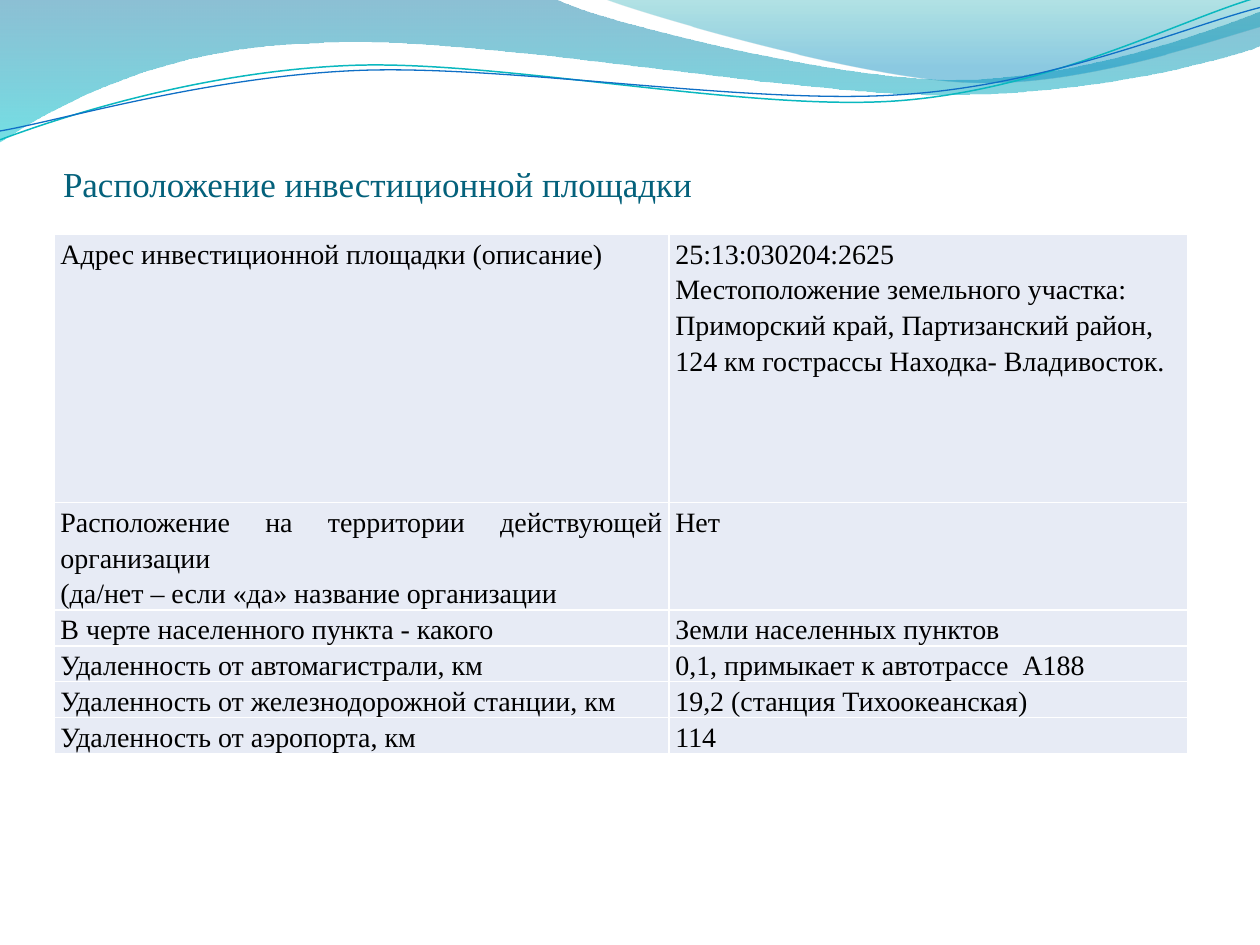
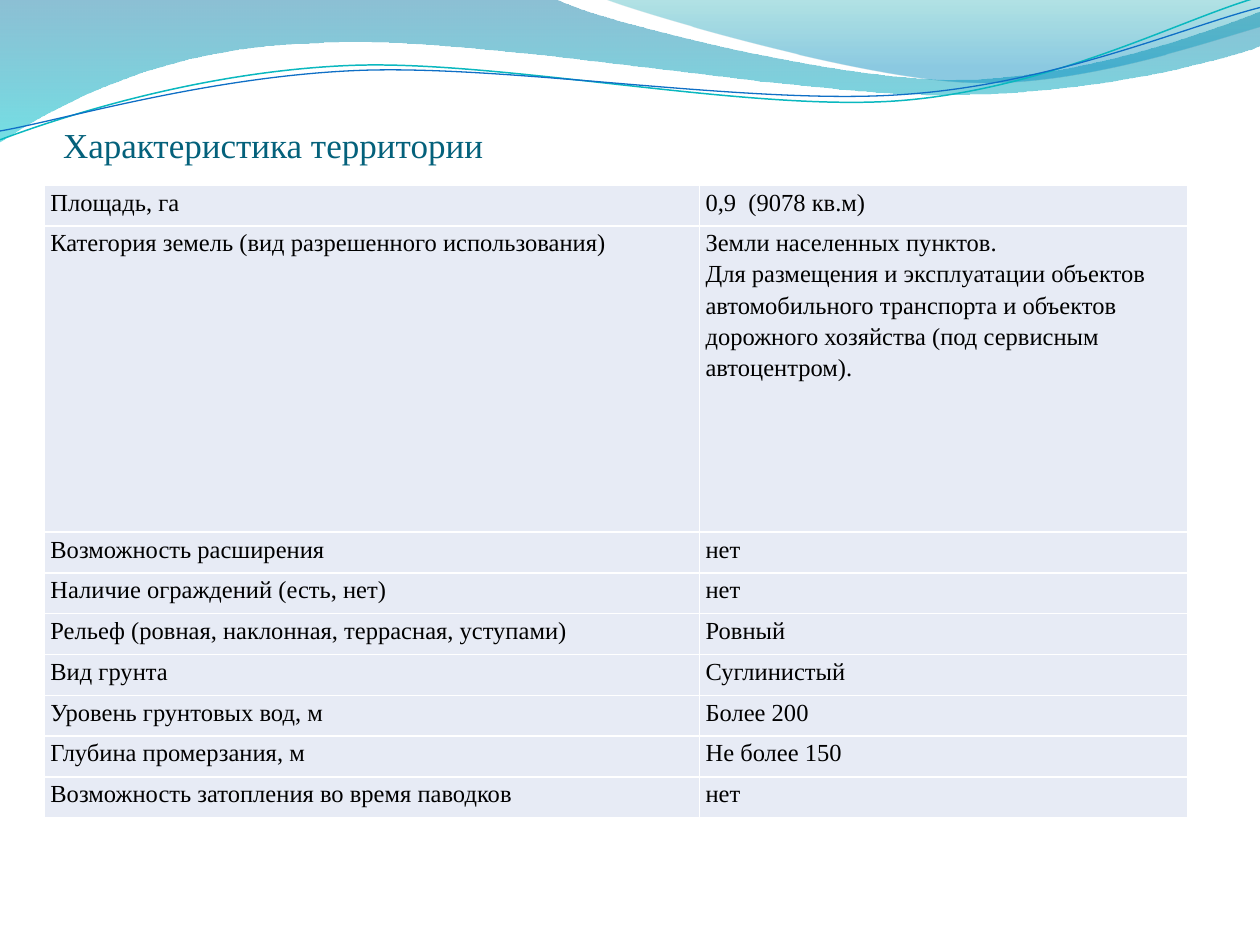
from dataclasses import dataclass
from math import cos, radians, sin

from lxml.etree import SubElement as Sub
from pptx import Presentation
from pptx.dml.color import RGBColor as Rgb
from pptx.enum.text import MSO_ANCHOR as Anchor, PP_ALIGN as Align
from pptx.oxml.ns import qn
from pptx.util import Inches, Pt


@dataclass(frozen=True)
class Theme:
    """Colours, font and type sizes of the deck."""
    font: str = "Times New Roman"
    title: str = "04617B"
    text: str = "000000"
    cell: str = "E7EBF5"
    rule: str = "FFFFFF"
    teal: str = "0AB8BF"
    blue: str = "0F6FC6"
    band: tuple = ((0, "0074A1", 45), (1, "00C6CF", 55))
    crest: tuple = ((0, "00A1A9", 30), (0.8, "008BBF", 45))
    head: int = 20
    large: int = 16
    small: int = 14
    lead: float = 1.15
    tilt: float = 2.7


THEME = Theme()

BAND = [
    (0, 0), (4.4, -0.01), (4.76, 0.17, 6.64, 0.63, 7.58, 0.63),
    (8.53, 0.63, 9.58, 0.26, 10, 0.09), (10.01, 0.36),
    (9.83, 0.44, 8.7, 0.76, 7.46, 0.75), (6.22, 0.75, 3.82, 0.28, 2.57, 0.34),
    (1.29, 0.36, 0.46, 0.83, -0.01, 1.13), (0, 0),
]
CREST = [
    (4.79, -0.01), (5.09, 0.11, 6.82, 0.62, 7.69, 0.65),
    (8.56, 0.69, 9.61, 0.32, 10, 0.21), (10, 0), (4.79, -0.01),
]
TEAL = [
    (0, 1.11), (0.48, 0.93, 1.58, 0.57, 2.77, 0.52),
    (3.95, 0.47, 5.93, 0.89, 7.13, 0.8), (8.33, 0.71, 9.38, 0.15, 9.98, -0.02),
]
BLUE = [
    (0, 1.04), (0.47, 0.96, 1.64, 0.61, 2.83, 0.56),
    (4.03, 0.51, 5.97, 0.84, 7.17, 0.75), (8.36, 0.67, 9.41, 0.21, 10, 0.06),
]

PLACE = [
    ("Адрес инвестиционной площадки (описание) ",
     "25:13:030204:2625\nМестоположение земельного участка: Приморский край, "
     "Партизанский район, 124 км гострассы Находка- Владивосток."),
    ("Расположение на территории действующей организации \n"
     "(да/нет – если «да» название организации", "Нет"),
    ("В черте населенного пункта - какого ", "Земли населенных пунктов"),
    ("Удаленность от автомагистрали, км ", "0,1, примыкает к автотрассе  А188"),
    ("Удаленность от железнодорожной станции, км ", "19,2 (станция Тихоокеанская)"),
    ("Удаленность от аэропорта, км ", "114"),
]
LAND = [
    ("Площадь, га ", "0,9  (9078 кв.м)"),
    ("Категория земель (вид разрешенного использования)",
     "Земли населенных пунктов.\nДля размещения и эксплуатации объектов "
     "автомобильного транспорта и объектов дорожного хозяйства "
     "(под сервисным автоцентром)."),
    ("Возможность расширения ", "нет"),
    ("Наличие ограждений (есть, нет) ", "нет"),
    ("Рельеф (ровная, наклонная, террасная, уступами)", "Ровный"),
    ("Вид грунта ", "Суглинистый"),
    ("Уровень грунтовых вод, м ", "Более 200"),
    ("Глубина промерзания, м ", "Не более 150"),
    ("Возможность затопления во время паводков ", "нет"),
]


def pairs(part):
    """Split flat numbers into points."""
    return list(zip(part[::2], part[1::2]))


def turn(route, mid, angle):
    """Rotate a route clockwise about a point."""
    c, s = cos(radians(angle)), sin(radians(angle))
    result = []
    for part in route:
        moved = []
        for x, y in pairs(part):
            dx, dy = x - mid[0], y - mid[1]
            moved += [mid[0] + dx * c - dy * s, mid[1] + dx * s + dy * c]
        result.append(tuple(moved))
    return result


def outline(slide, route, close):
    """Build a freeform of lines and cubic curves."""
    ends = [(Inches(part[-2]), Inches(part[-1])) for part in route]
    pen = slide.shapes.build_freeform(*ends[0])
    pen.add_line_segments(ends[1:], close=close)
    shape = pen.convert_to_shape()
    shape.shadow.inherit = False
    nodes = list(shape._element.spPr.iter(qn("a:lnTo")))
    for node, part in zip(nodes, route[1:]):
        if len(part) == 2:
            continue
        end = node[0]
        node.tag = qn("a:cubicBezTo")
        for x, y in pairs(part[:4]):
            Sub(node, qn("a:pt"), x=str(Inches(x) - shape.left),
                y=str(Inches(y) - shape.top))
        node.append(end)
    return shape


def wave(slide, route, stops):
    """Draw a translucent band shaded from top to bottom."""
    shape = outline(slide, route, True)
    shape.line.fill.background()
    shape.fill.gradient()
    shape.fill.gradient_angle = 270
    for stop, (pos, color, _) in zip(shape.fill.gradient_stops, stops):
        stop.position = pos
        stop.color.rgb = Rgb.from_string(color)
    tints = shape._element.spPr.iter(qn("a:srgbClr"))
    for tint, (_, _, alpha) in zip(list(tints), stops):
        Sub(tint, qn("a:alpha"), val=str(alpha * 1000))
    return shape


def curve(slide, route, mid, color, width):
    """Draw a thin, slightly tilted open curve."""
    shape = outline(slide, turn(route, mid, THEME.tilt), False)
    shape.rotation = 360 - THEME.tilt
    shape.fill.background()
    shape.line.color.rgb = Rgb.from_string(color)
    shape.line.width = Pt(width)
    return shape


def dress(slide):
    """Move the waves to the layout that the slides share."""
    waves = [
        wave(slide, BAND, THEME.band),
        wave(slide, CREST, THEME.crest),
        curve(slide, TEAL, (4.99, 0.57), THEME.teal, 0.85),
        curve(slide, BLUE, (5, 0.59), THEME.blue, 0.75),
    ]
    tree = slide.slide_layout.shapes._spTree
    for num, shape in enumerate(waves):
        shape._element.nvSpPr.cNvPr.set("id", str(20 + num))
        tree.insert(2 + num, shape._element)


def style(para, size, color):
    """Set the font of each run."""
    for run in para.runs:
        run.font.name = THEME.font
        run.font.size = Pt(size)
        run.font.color.rgb = Rgb.from_string(color)


def title(slide, text, height):
    """Fill and place the title."""
    head = slide.shapes.title
    head.left, head.top = Inches(0.5), Inches(0.77)
    head.width, head.height = Inches(9), Inches(height)
    frame = head.text_frame
    frame.text = text
    frame.vertical_anchor = Anchor.BOTTOM
    frame.margin_left = frame.margin_right = frame.margin_bottom = 0
    frame.margin_top = Inches(0.05)
    frame.paragraphs[0].alignment = Align.LEFT
    style(frame.paragraphs[0], THEME.head, THEME.title)


def border(cell):
    """Rule all four sides of a cell."""
    props = cell._tc.get_or_add_tcPr()
    for side in ("lnL", "lnR", "lnT", "lnB"):
        line = Sub(props, qn(f"a:{side}"), w=str(Pt(1)))
        Sub(Sub(line, qn("a:solidFill")), qn("a:srgbClr"), val=THEME.rule)


def fill(cell, text, size, align):
    """Write and format one cell."""
    border(cell)
    cell.fill.solid()
    cell.fill.fore_color.rgb = Rgb.from_string(THEME.cell)
    cell.margin_left = cell.margin_right = Inches(0.05)
    cell.margin_top = cell.margin_bottom = 0
    cell.text_frame.text = text
    for para in cell.text_frame.paragraphs:
        para.alignment = align
        para.line_spacing = THEME.lead
        style(para, size, THEME.text)


def grid(slide, data, box, cols, rows, size):
    """Add a two-column table of facts."""
    left, top, height = box
    frame = slide.shapes.add_table(
        len(data), len(cols), Inches(left), Inches(top),
        Inches(sum(cols)), Inches(height))
    table = frame.table
    table.first_row = table.horz_banding = False
    for col, width in zip(table.columns, cols):
        col.width = Inches(width)
    for row, depth, (label, value) in zip(table.rows, rows, data):
        row.height = Inches(depth)
        fill(row.cells[0], label, size, Align.JUSTIFY)
        fill(row.cells[1], value, size,
             Align.LEFT if "\n" in value else Align.JUSTIFY)
    frame.height = Inches(height)


def main():
    """Build the deck."""
    deck = Presentation()
    deck.slide_width, deck.slide_height = Inches(10), Inches(7.5)
    site, land = (deck.slides.add_slide(deck.slide_layouts[5]) for _ in range(2))
    dress(site)
    title(site, "Расположение инвестиционной площадки", 0.85)
    grid(site, PLACE, (0.43, 1.86, 4.27), (4.88, 4.12),
         [2.13, 0.43] + [0.22] * 4, THEME.large)
    title(land, "Характеристика территории", 0.54)
    tall, full = 2.43, 5.02
    low = (full - tall) / (len(LAND) - 1)
    grid(land, LAND, (0.35, 1.47, full), (5.2, 3.88),
         [low, tall] + [low] * 7, THEME.small)
    deck.save("out.pptx")


if __name__ == "__main__":
    main()
